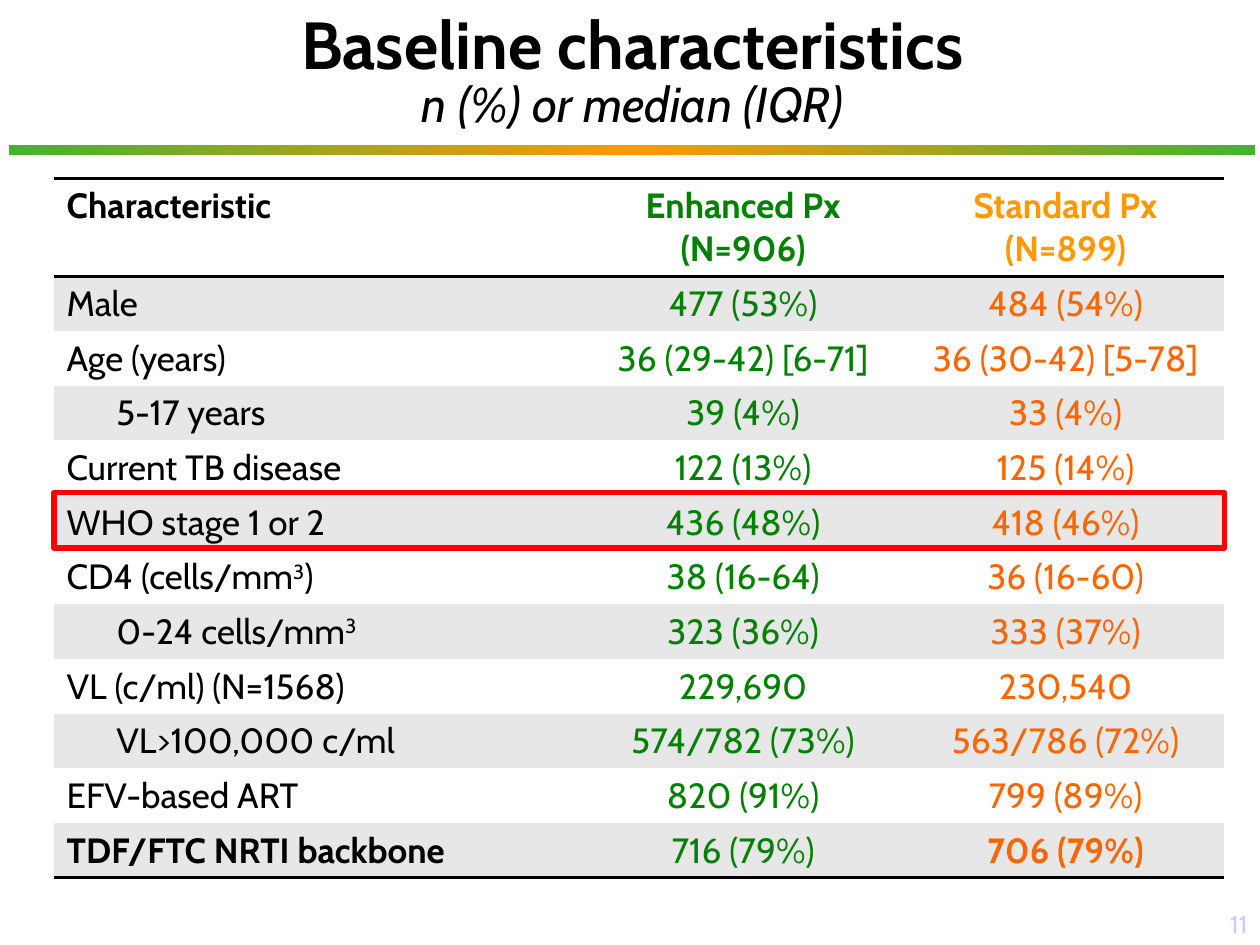
import copy

import pptx
import pptx.dml.color
import pptx.enum.shapes
import pptx.enum.text
import pptx.oxml
import pptx.oxml.ns
import pptx.util

Cm = pptx.util.Cm
Pt = pptx.util.Pt
ALIGN = pptx.enum.text.PP_ALIGN
ANCHOR = pptx.enum.text.MSO_ANCHOR

COLORS = {
    "text": "000000", "enhanced": "008000", "standard_head": "FF9900",
    "standard": "FF6600", "band": "E7E7E7", "plain": "FFFFFF",
    "rule_end": "46B22C", "rule_mid": "FF9900", "mark": "FF0000",
    "number": "CCCCFF",
}
FONT = "Cabin"
NO_STYLE = "{2D5ABB26-0587-4C30-8999-92F81FD0307C}"

COL_WIDTHS = [10.59, 6.6, 6.4]
HEAD_HEIGHT, ROW_HEIGHT = 1.97, 1.1
HEADER = ["Characteristic", "Enhanced Px\n(N=906)", "Standard Px\n(N=899)"]
# label, enhanced, standard, indented
ROWS = [
    ("Male", "477 (53%)", "484 (54%)", False),
    ("Age (years)", "36 (29-42) [6-71]", "36 (30-42) [5-78]", False),
    ("5-17 years", "39 (4%)", "33 (4%)", True),
    ("Current TB disease", "122 (13%)", "125 (14%)", False),
    ("WHO stage 1 or 2", "436 (48%)", "418 (46%)", False),
    ("CD4 (cells/mm^3^)", "38 (16-64)", "36 (16-60)", False),
    ("0-24 cells/mm^3^", "323 (36%)", "333 (37%)", True),
    ("VL (c/ml) (N=1568)", "229,690", "230,540", False),
    ("VL>100,000 c/ml", "574/782 (73%)", "563/786 (72%)", True),
    ("EFV-based ART", "820 (91%)", "799 (89%)", False),
    ("TDF/FTC NRTI backbone", "716 (79%)", "706 (79%)", False),
]


def rgb(name):
    return pptx.dml.color.RGBColor.from_string(COLORS[name])


def add_text(p, text, size=20, color="text", bold=False, italic=False, align=ALIGN.LEFT):
    """Add text to a paragraph; newlines break the line, ^x^ is superscript."""
    p.alignment = align
    for i, line in enumerate(text.split("\n")):
        if i:
            p.add_line_break()
        for j, part in enumerate(line.split("^")):
            if not part:
                continue
            r = p.add_run()
            r.text = part
            r.font.name, r.font.size = FONT, Pt(size)
            r.font.bold, r.font.italic = bold, italic
            r.font.color.rgb = rgb(color)
            if j % 2:
                r.font._element.set("baseline", "30000")


def add_box(slide, left, top, width, height, anchor):
    tf = slide.shapes.add_textbox(Cm(left), Cm(top), Cm(width), Cm(height)).text_frame
    tf.word_wrap = True
    tf.vertical_anchor = anchor
    return tf.paragraphs[0]


def add_rect(slide, left, top, width, height):
    sp = slide.shapes.add_shape(pptx.enum.shapes.MSO_SHAPE.RECTANGLE,
                                Cm(left), Cm(top), Cm(width), Cm(height))
    sp.shadow.inherit = False
    return sp


def add_rule(slide, left, top, width, height):
    sp = add_rect(slide, left, top, width, height)
    sp.line.fill.background()
    sp.fill.gradient()
    sp.fill.gradient_angle = 0
    # Third stop, so the colour returns to green
    stops = sp._element.spPr.find(".//" + pptx.oxml.ns.qn("a:gsLst"))
    stops.append(copy.deepcopy(stops[0]))
    for stop, pos, name in zip(sp.fill.gradient_stops, (0, 0.5, 1),
                               ("rule_end", "rule_mid", "rule_end")):
        stop.position = pos
        stop.color.rgb = rgb(name)


def add_header(slide, left, top, width, height):
    p = add_box(slide, left, top, width, height, ANCHOR.MIDDLE)
    p.line_spacing = 0.85
    add_text(p, "Baseline characteristics", size=38, bold=True, align=ALIGN.CENTER)
    p.add_line_break()
    add_text(p, "n (%) or median (IQR)", size=28, italic=True, align=ALIGN.CENTER)


def add_border(cell, side):
    cell._tc.get_or_add_tcPr().append(pptx.oxml.parse_xml(
        f'<a:{side} {pptx.oxml.ns.nsdecls("a")} w="{Pt(2)}"><a:solidFill>'
        f'<a:srgbClr val="{COLORS["text"]}"/></a:solidFill></a:{side}>'))


def fill_row(table, i, texts, colors, bolds, fill, sides=()):
    for j, (text, color, bold) in enumerate(zip(texts, colors, bolds)):
        cell = table.cell(i, j)
        for side in sides:
            add_border(cell, side)
        cell.fill.solid()
        cell.fill.fore_color.rgb = rgb(fill)
        add_text(cell.text_frame.paragraphs[0], text, color=color, bold=bold,
                 align=ALIGN.CENTER if j else ALIGN.LEFT)


def add_characteristics(slide, left, top):
    height = HEAD_HEIGHT + ROW_HEIGHT * len(ROWS)
    table = slide.shapes.add_table(len(ROWS) + 1, len(COL_WIDTHS), Cm(left), Cm(top),
                                   Cm(sum(COL_WIDTHS)), Cm(height)).table
    table._tbl.tblPr.find(pptx.oxml.ns.qn("a:tableStyleId")).text = NO_STYLE
    for col, width in zip(table.columns, COL_WIDTHS):
        col.width = Cm(width)
    for i, row in enumerate(table.rows):
        row.height = Cm(ROW_HEIGHT if i else HEAD_HEIGHT)

    fill_row(table, 0, HEADER, ("text", "enhanced", "standard_head"), (True,) * 3,
             "plain", ("lnT", "lnB"))
    for i, (*texts, indented) in enumerate(ROWS, 1):
        last = i == len(ROWS)
        fill_row(table, i, texts, ("text", "enhanced", "standard"), (last, False, last),
                 "band" if i % 2 else "plain", ("lnB",) if last else ())
        if indented:
            pPr = table.cell(i, 0).text_frame.paragraphs[0]._p.get_or_add_pPr()
            pPr.set("marL", str(Cm(1)))


def add_highlight(slide, left, top, width, height):
    sp = add_rect(slide, left, top, width, height)
    sp.fill.background()
    sp.line.color.rgb = rgb("mark")
    sp.line.width = Pt(3)


def main():
    prs = pptx.Presentation()
    prs.slide_width, prs.slide_height = Cm(25.4), Cm(19.05)
    slide = prs.slides.add_slide(prs.slide_layouts[6])

    add_rule(slide, 0.18, 2.92, 25.12, 0.2)
    add_header(slide, 2.49, 0.64, 20.52, 1.7)
    add_characteristics(slide, 1.09, 3.6)
    # Slide number
    add_text(add_box(slide, 22.86, 17.78, 2.54, 1.27, ANCHOR.BOTTOM), "11",
             size=14, color="number", align=ALIGN.RIGHT)
    # Frame around the WHO stage row
    add_highlight(slide, 1.09, 9.93, sum(COL_WIDTHS), 1.12)

    prs.save("out.pptx")


if __name__ == "__main__":
    main()
